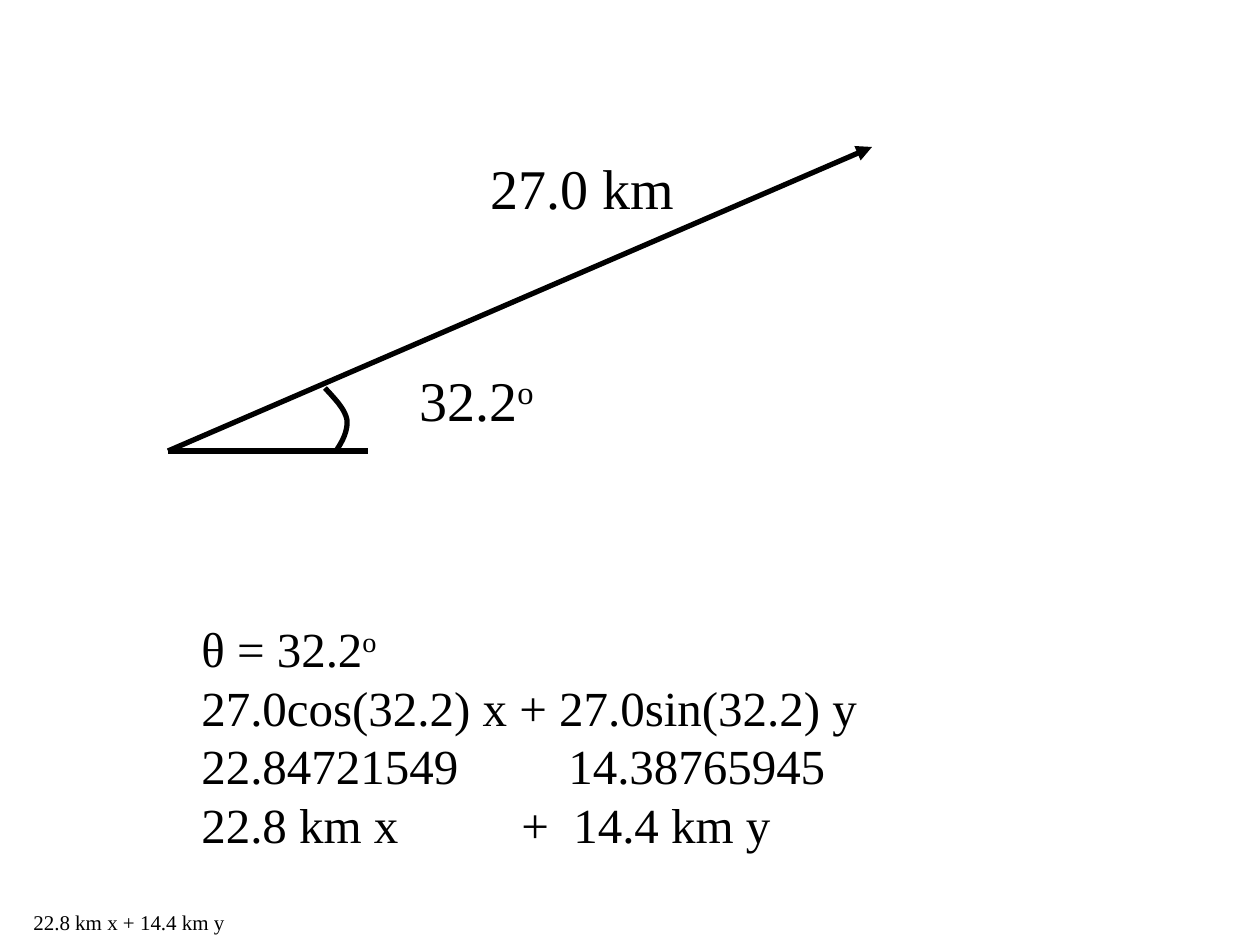
from collections import namedtuple
from dataclasses import dataclass

from lxml import etree
from pptx import Presentation, util as u
from pptx.dml.color import RGBColor
from pptx.enum import shapes, text
from pptx.oxml.ns import qn

Box = namedtuple("Box", "left top width height")


@dataclass(frozen=True)
class Theme:
    """Colours, font and sizes of the slide."""
    ink: RGBColor = RGBColor(0, 0, 0)
    font: str = "Times New Roman"
    label: int = 32
    working: int = 28
    answer: int = 12
    stroke: int = 3


THEME = Theme()
SCALE = u.Inches(1) / 126


def px(length):
    """Turn px into EMU."""
    return u.Emu(round(length * SCALE))


def add_text(slide, box, size, paragraphs, tab_stops=()):
    """Place a text box; each paragraph is a list of (text, is_superscript) runs."""
    frame = slide.shapes.add_textbox(*map(px, box)).text_frame
    frame.word_wrap = False
    frame.auto_size = text.MSO_AUTO_SIZE.SHAPE_TO_FIT_TEXT
    for index, runs in enumerate(paragraphs):
        paragraph = frame.add_paragraph() if index else frame.paragraphs[0]
        for words, is_superscript in runs:
            run = paragraph.add_run()
            run.text = words
            run.font.name = THEME.font
            run.font.size = u.Pt(size)
            run.font.color.rgb = THEME.ink
            if is_superscript:
                run._r.get_or_add_rPr().set("baseline", "30000")
        if any("\t" in words for words, _ in runs):
            tabs = etree.SubElement(paragraph._p.get_or_add_pPr(), qn("a:tabLst"))
            for stop in tab_stops[index]:
                etree.SubElement(tabs, qn("a:tab"), pos=str(px(stop)), algn="l")


def style_line(line):
    """Give a line the theme's colour and width."""
    line.color.rgb = THEME.ink
    line.width = u.Pt(THEME.stroke)


def add_ray(slide, start, end, has_arrow=False):
    """Draw a straight ray, with an arrowhead at its end if wanted."""
    ray = slide.shapes.add_connector(
        shapes.MSO_CONNECTOR.STRAIGHT, *map(px, (*start, *end)))
    style_line(ray.line)
    if has_arrow:
        etree.SubElement(ray.line._get_or_add_ln(), qn("a:tailEnd"), type="triangle")
    etree.SubElement(ray._element.spPr, qn("a:effectLst"))


def bezier(points, steps=16):
    """Return points along a cubic curve, leaving out its start."""
    def at(t):
        weights = ((1 - t) ** 3, 3 * t * (1 - t) ** 2, 3 * t ** 2 * (1 - t), t ** 3)
        return tuple(sum(w * p[axis] for w, p in zip(weights, points)) for axis in (0, 1))
    return [at(step / steps) for step in range(1, steps + 1)]


def add_angle_arc(slide, left, top):
    """Draw the open arc that marks the angle."""
    knots = [(left + x, top + y) for x, y in
             ((0, 0), (10, 11), (20, 21), (22, 32), (23, 42), (18, 53), (11, 63))]
    curve = bezier(knots[:4]) + bezier(knots[3:])
    builder = slide.shapes.build_freeform(*map(px, knots[0]))
    builder.add_line_segments([tuple(map(px, point)) for point in curve], close=False)
    arc = builder.convert_to_shape()
    arc.fill.background()
    arc.shadow.inherit = False
    style_line(arc.line)


def add_vector_diagram(slide, box):
    """Draw the vector, its base line, the angle and both labels."""
    left, top, width, height = box
    origin = (left, top + height)
    add_ray(slide, origin, (left + width, top), has_arrow=True)
    add_ray(slide, origin, (left + 200, top + height))
    add_angle_arc(slide, left + 157, top + height - 63)
    add_text(slide, Box(left + 239, top + 212, 141, 79), THEME.label,
             [[("32.2", False), ("o", True)]])
    add_text(slide, Box(left + 310, top, 209, 79), THEME.label, [[("27.0 km", False)]])


def add_working(slide, box):
    """Write the steps that resolve the vector into components."""
    add_text(slide, box, THEME.working, [
        [("θ = 32.2", False), ("o", True)],
        [("27.0cos(32.2) x + 27.0sin(32.2) y", False)],
        [("22.84721549\t14.38765945", False)],
        [("22.8 km x\t+\t14.4 km y", False)],
    ], tab_stops={2: (367,), 3: (320, 372)})


def add_answer(slide, box):
    """Write the short answer at the foot of the slide."""
    add_text(slide, box, THEME.answer, [[("22.8 km x + 14.4 km y", False)]])


def main():
    """Build and save the slide."""
    presentation = Presentation()
    presentation.slide_width, presentation.slide_height = px(1260), px(945)
    slide = presentation.slides.add_slide(presentation.slide_layouts[6])
    add_answer(slide, Box(21, 903, 217, 38))
    add_vector_diagram(slide, Box(168, 147, 704, 304))
    add_working(slide, Box(189, 612, 682, 248))
    presentation.save("out.pptx")


if __name__ == "__main__":
    main()
